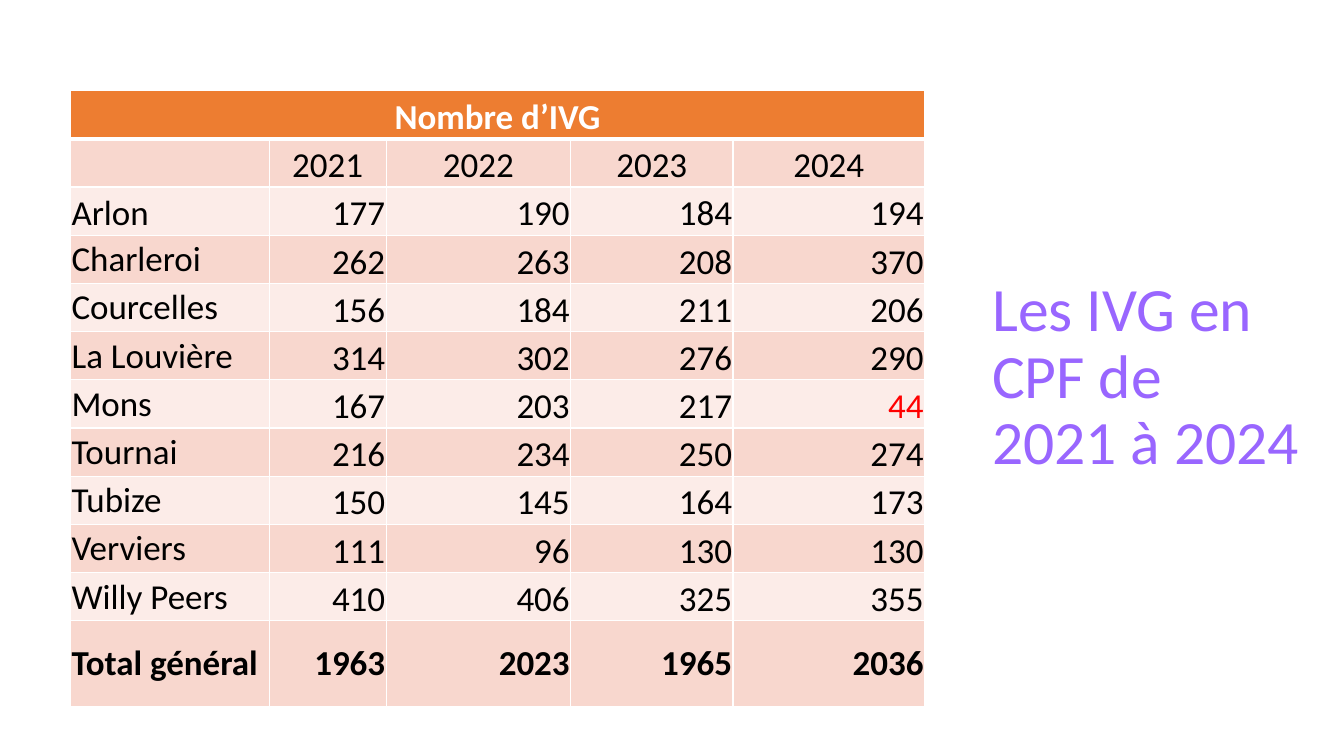
from lxml.etree import SubElement
from pptx import Presentation
from pptx.dml.color import RGBColor
from pptx.enum.text import MSO_ANCHOR, MSO_AUTO_SIZE, PP_ALIGN
from pptx.oxml.ns import qn
from pptx.util import Inches, Pt

COLORS = {
    "title": "9966FF",
    "header": "ED7D31",
    "band_dark": "F8D7CE",
    "band_light": "FCECE8",
    "white": "FFFFFF",
    "ink": "000000",
    "alert": "FF0000",
}
FONT = "Calibri"
GRID = Inches(0.1)  # one step of the layout grid

YEARS = ["2021", "2022", "2023", "2024"]
CENTRES = [
    ("Arlon", 177, 190, 184, 194),
    ("Charleroi", 262, 263, 208, 370),
    ("Courcelles", 156, 184, 211, 206),
    ("La Louvière", 314, 302, 276, 290),
    ("Mons", 167, 203, 217, 44),
    ("Tournai", 216, 234, 250, 274),
    ("Tubize", 150, 145, 164, 173),
    ("Verviers", 111, 96, 130, 130),
    ("Willy Peers", 410, 406, 325, 355),
]
TOTALS = ("Total général", 1963, 2023, 1965, 2036)
COLUMN_STEPS = [19.7, 11.6, 18.3, 16.1, 19]
TOTAL_ROW_STEPS = 8.5


def grid_box(left, top, width, height):
    return [round(steps * GRID) for steps in (left, top, width, height)]


def write(frame, text, size=25, color="ink", bold=False,
          align=PP_ALIGN.LEFT, spacing=None):
    paragraph = frame.paragraphs[0]
    paragraph.alignment = align
    if spacing:
        paragraph.line_spacing = spacing
    run = paragraph.add_run()
    run.text = str(text)
    run.font.name = FONT
    run.font.size = Pt(size)
    run.font.bold = bold
    run.font.color.rgb = RGBColor.from_string(COLORS[color])


def style_cell(cell, fill, anchor, top=1, bottom=1):
    cell.margin_left = cell.margin_right = cell.margin_top = Inches(0.01)
    cell.margin_bottom = 0
    cell.vertical_anchor = anchor
    properties = cell._tc.get_or_add_tcPr()
    for side, width in (("L", 1), ("R", 1), ("T", top), ("B", bottom)):
        border = SubElement(properties, qn(f"a:ln{side}"), w=str(Pt(width)))
        line_fill = SubElement(border, qn("a:solidFill"))
        SubElement(line_fill, qn("a:srgbClr"), val=COLORS["white"])
    cell.fill.solid()
    cell.fill.fore_color.rgb = RGBColor.from_string(COLORS[fill])


def add_title(slide, box):
    title = slide.shapes.title
    title.left, title.top, title.width, title.height = box
    frame = title.text_frame
    frame.word_wrap = True
    frame.auto_size = MSO_AUTO_SIZE.NONE
    frame.vertical_anchor = MSO_ANCHOR.MIDDLE
    write(frame, "Les IVG en CPF de 2021 à 2024", size=44, color="title",
          spacing=0.9)


def add_ivg_table(slide, box):
    rows = [("Nombre d’IVG", "", "", "", ""), ("", *YEARS), *CENTRES, TOTALS]
    table = slide.shapes.add_table(len(rows), len(COLUMN_STEPS), *box).table
    last = len(rows) - 1

    # Column widths and row heights
    for column, steps in zip(table.columns, COLUMN_STEPS):
        column.width = round(box[2] * steps / sum(COLUMN_STEPS))
    total_height = round(TOTAL_ROW_STEPS * GRID)
    for row in table.rows:
        row.height = (box[3] - total_height) // last
    table.rows[last].height = total_height

    # Cells
    for r, values in enumerate(rows):
        band = "band_dark" if r % 2 else "band_light"
        for c, value in enumerate(values):
            cell = table.cell(r, c)
            middle = r == last or (c == 0 and r > 2)
            style_cell(cell, "header" if r == 0 else band,
                       MSO_ANCHOR.MIDDLE if middle else MSO_ANCHOR.BOTTOM,
                       top=3 if r == 1 else 1, bottom=3 if r == 0 else 1)
            if value == "":
                continue
            if r < 2:
                align = PP_ALIGN.CENTER
            else:
                align = PP_ALIGN.RIGHT if c else PP_ALIGN.LEFT
            color = "white" if r == 0 else "alert" if value == 44 else "ink"
            write(cell.text_frame, value, color=color, align=align,
                  bold=r in (0, last))
    table.cell(0, 0).merge(table.cell(0, len(COLUMN_STEPS) - 1))


def main():
    presentation = Presentation()
    presentation.slide_width = Inches(13.33)
    presentation.slide_height = Inches(7.5)
    slide = presentation.slides.add_slide(presentation.slide_layouts[5])
    add_title(slide, grid_box(97.4, 7, 32.5, 61.1))
    add_ivg_table(slide, grid_box(7, 9, 84.7, 61.1))
    presentation.save("out.pptx")


if __name__ == "__main__":
    main()
